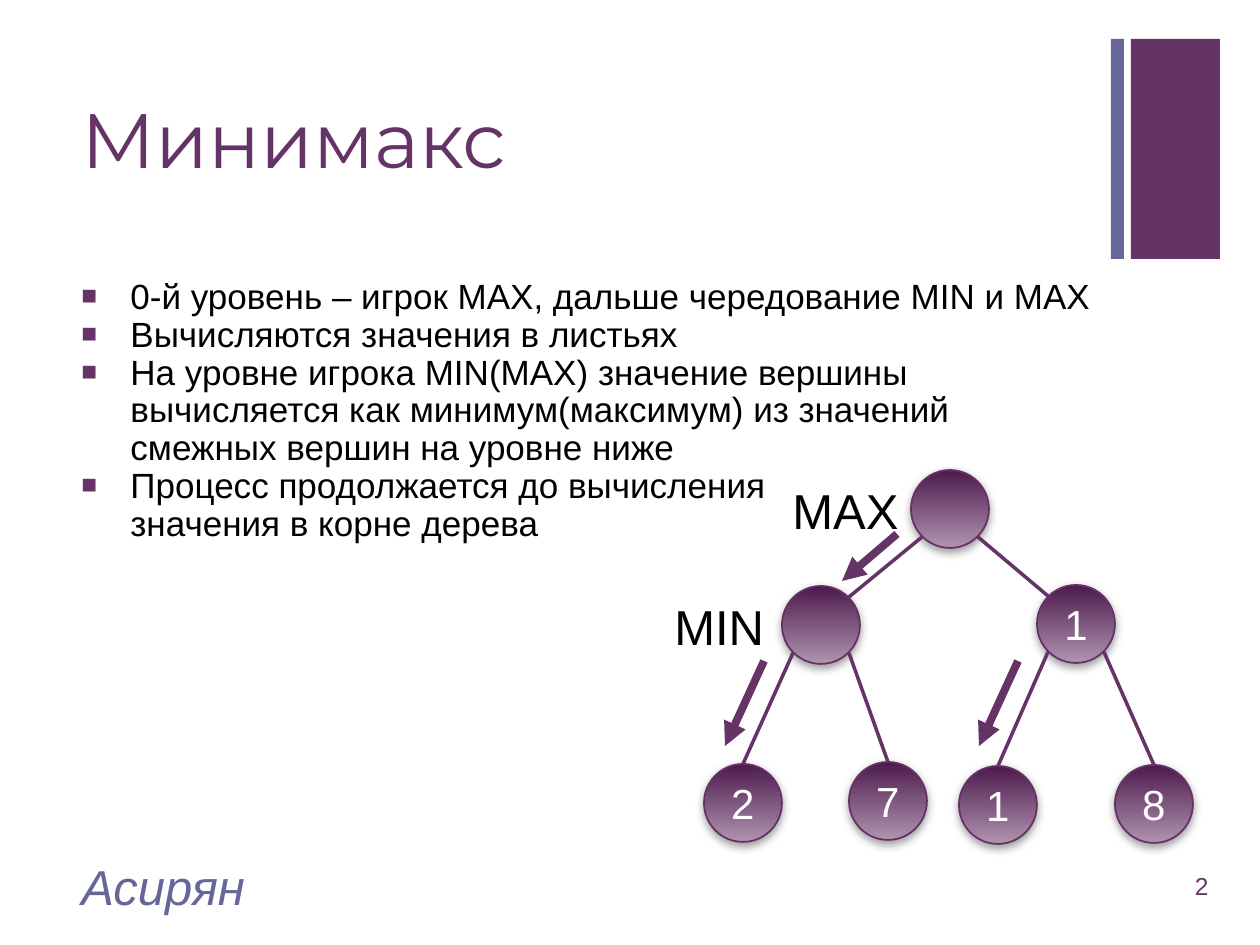
from lxml import etree
from pptx import Presentation
from pptx import util as u
from pptx.dml import color
from pptx.enum import shapes, text
from pptx.oxml import ns

EMU_PER_PX = 914400 / 126
PLUM, VIOLET, WHITE, BLACK = "663366", "666699", "FFFFFF", "000000"
NODE = 78
CORNER = 28
LEFT = 69

BULLETS = [
    "0-й уровень – игрок MAX, дальше чередование MIN и MAX",
    "Вычисляются значения в листьях",
    "На уровне игрока MIN(MAX) значение вершины вычисляется как "
    "минимум(максимум) из значений смежных вершин на уровне ниже",
    "Процесс продолжается до вычисления\vзначения в корне дерева",
]
ROOT = (950, 509)
BRANCHES = [
    ((821, 625), "", [((743, 803), "2"), ((888, 801), "7")]),
    ((1076, 624), "1", [((998, 805), "1"), ((1154, 804), "8")]),
]
ARROWS = [((764, 661), (725, 746)), ((1018, 661), (979, 746)), ((897, 534), (842, 581))]


def px(length):
    """Turn px into EMU."""
    return u.Emu(round(length * EMU_PER_PX))


def rgb(value):
    """Turn a hex string into a colour."""
    return color.RGBColor.from_string(value)


def add_xml(parent, tag, **attributes):
    """Append a DrawingML element and return it."""
    return etree.SubElement(parent, ns.qn(tag), attributes)


def write(para, words, size=20, ink=BLACK, font="Arial", italic=False, align=None, spacing=None):
    """Fill a paragraph with formatted text."""
    para.text = words
    para.alignment = align
    para.line_spacing = spacing
    for span in para.runs:
        span.font.name, span.font.size, span.font.italic = font, u.Pt(size), italic
        span.font.color.rgb = rgb(ink)


def add_text(page, frame, words, wrap=True, anchor=text.MSO_ANCHOR.MIDDLE, **style):
    """Add a text box with one paragraph."""
    box = page.shapes.add_textbox(*map(px, frame))
    box.text_frame.word_wrap = wrap
    box.text_frame.vertical_anchor = anchor
    write(box.text_frame.paragraphs[0], words, **style)


def add_bullets(page, frame, items):
    """Add a list with square bullets."""
    body = page.shapes.add_textbox(*map(px, frame)).text_frame
    body.word_wrap = True
    for index, item in enumerate(items):
        para = body.paragraphs[0] if index == 0 else body.add_paragraph()
        write(para, item, spacing=0.9)
        props = para._p.get_or_add_pPr()
        props.set("marL", str(px(49)))
        props.set("indent", str(-px(49)))
        add_xml(add_xml(props, "a:buClr"), "a:srgbClr", val=PLUM)
        add_xml(props, "a:buSzPct", val="75000")
        add_xml(props, "a:buFont", typeface="Arial")
        add_xml(props, "a:buChar", char="■")


def add_bar(page, frame, fill):
    """Add a plain decorative rectangle."""
    bar = page.shapes.add_shape(shapes.MSO_SHAPE.RECTANGLE, *map(px, frame))
    bar.shadow.inherit = False
    bar.fill.solid()
    bar.fill.fore_color.rgb = rgb(fill)
    bar.line.fill.background()


def add_node(page, center, label=""):
    """Add a shaded tree node around its center."""
    x, y = center
    node = page.shapes.add_shape(
        shapes.MSO_SHAPE.FLOWCHART_CONNECTOR, px(x - NODE / 2), px(y - NODE / 2), px(NODE), px(NODE))
    node.fill.gradient()
    node.fill.gradient_angle = 270
    for stop, shade in zip(node.fill.gradient_stops, ("4D1A4D", "AF94AF")):
        stop.color.rgb = rgb(shade)
    node.line.color.rgb = rgb("653165")
    node.line.width = u.Pt(1)
    node.shadow.inherit = False
    effects = node._element.spPr.find(ns.qn("a:effectLst"))
    shadow = add_xml(effects, "a:outerShdw", blurRad=str(u.Pt(5)), dist=str(u.Pt(2)),
                     dir="5400000", rotWithShape="0")
    add_xml(add_xml(shadow, "a:srgbClr", val="808080"), "a:alpha", val="75000")
    if label:
        node.text_frame.vertical_anchor = text.MSO_ANCHOR.MIDDLE
        write(node.text_frame.paragraphs[0], label, size=24, ink=WHITE, align=text.PP_ALIGN.CENTER)
    return node


def add_line(page, start, end, width=2, arrow=False):
    """Add a straight line, with an arrowhead if asked."""
    line = page.shapes.add_connector(shapes.MSO_CONNECTOR.STRAIGHT, *map(px, start + end))
    line.line.color.rgb = rgb(PLUM)
    line.line.width = u.Pt(width)
    if arrow:
        add_xml(line.line._get_or_add_ln(), "a:tailEnd", type="triangle")
    add_xml(line._element.spPr, "a:effectLst")
    return line


def corner(center, side, level):
    """Return the diagonal point of a node on the given side and level."""
    return center[0] + side * CORNER, center[1] + level * CORNER


def add_tree(page):
    """Add the nodes and edges of the game tree."""
    add_node(page, ROOT)
    for side, (center, label, leaves) in zip((-1, 1), BRANCHES):
        add_node(page, center, label)
        add_line(page, corner(ROOT, side, 1), corner(center, -side, -1))
        for leaf_side, (leaf_center, value) in zip((-1, 1), leaves):
            leaf = add_node(page, leaf_center, value)
            edge = add_line(page, corner(center, leaf_side, 1), leaf_center)
            edge.end_connect(leaf, 0)


def main():
    """Build the slide and save it."""
    deck = Presentation()
    deck.slide_width, deck.slide_height = px(1260), px(945)
    page = deck.slides.add_slide(deck.slide_layouts[6])
    add_bar(page, (1131, 39, 89, 220), PLUM)
    add_bar(page, (1111, 39, 13, 220), VIOLET)
    add_text(page, (LEFT, 67, 1041, 154), "Минимакс", size=44, ink=PLUM, font="Montserrat", spacing=0.9)
    add_bullets(page, (LEFT, 273, 1041, 571), BULLETS)
    add_tree(page)
    for frame, player in (((780, 474, 132, 72), "MAX"), ((662, 590, 116, 72), "MIN")):
        add_text(page, frame, player, wrap=False, anchor=text.MSO_ANCHOR.TOP, size=28)
    for start, end in ARROWS:
        add_line(page, start, end, width=4.5, arrow=True)
    add_text(page, (LEFT, 861, 844, 50), "Асирян", size=28, ink=VIOLET, italic=True)
    add_text(page, (1144, 861, 77, 50), "2", size=14, ink=PLUM, align=text.PP_ALIGN.RIGHT)
    deck.save("out.pptx")


if __name__ == "__main__":
    main()
